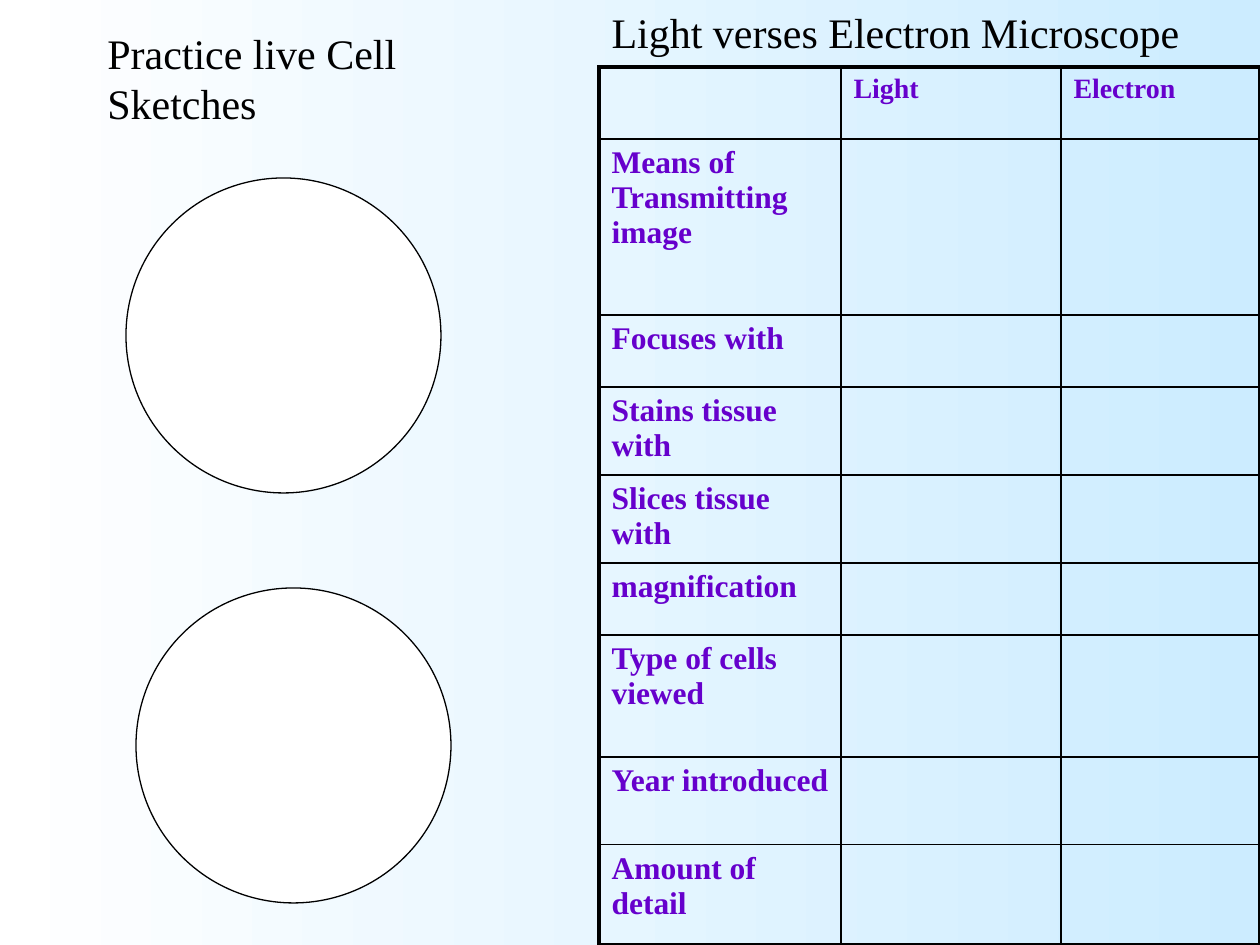
"""Build the cell sketches and microscope comparison slide."""
from lxml import etree
from pptx import Presentation
from pptx.dml.color import RGBColor
from pptx.enum.shapes import MSO_SHAPE
from pptx.enum.text import MSO_ANCHOR, PP_ALIGN
from pptx.oxml.ns import qn
from pptx.util import Pt

OVAL = MSO_SHAPE.OVAL
TOP = MSO_ANCHOR.TOP
LEFT = PP_ALIGN.LEFT
BLACK = RGBColor(0x00, 0x00, 0x00)
WHITE = RGBColor(0xFF, 0xFF, 0xFF)
PALE_BLUE = RGBColor(0xCC, 0xEC, 0xFF)
PURPLE = RGBColor(0x66, 0x00, 0xCC)
FONT = "Times New Roman"
OUTER, INNER = Pt(2.25), Pt(1)


def px(n):
    return round(n * 914400 / 126)


def write(tf, text, size, color, bold=False):
    tf.word_wrap = True
    p = tf.paragraphs[0]
    p.alignment = LEFT
    r = p.add_run()
    r.text = text
    r.font.name = FONT
    r.font.size = Pt(size)
    r.font.bold = bold
    r.font.color.rgb = color


prs = Presentation()
prs.slide_width, prs.slide_height = px(1260), px(945)
s = prs.slides.add_slide(prs.slide_layouts[5])

bg = s.background.fill
bg.gradient()
bg.gradient_angle = 0
for stop, color in zip(bg.gradient_stops, (WHITE, PALE_BLUE)):
    stop.color.rgb = color

title = s.shapes.title
title.left, title.top, title.width, title.height = px(599), px(0), px(661), px(63)
title.text_frame.vertical_anchor = TOP
write(title.text_frame, "Light verses Electron Microscope", 24, BLACK)

rows = [
    (72, ["", "Light", "Electron"]),
    (176, ["Means of Transmitting image"]),
    (72, ["Focuses with"]),
    (88, ["Stains tissue with"]),
    (88, ["Slices tissue with"]),
    (72, ["magnification"]),
    (122, ["Type of cells viewed"]),
    (88, ["Year introduced"]),
    (100, ["Amount of detail"]),
]
widths = [242, 220, 199]
last_row, last_col = len(rows) - 1, len(widths) - 1
table = s.shapes.add_table(len(rows), len(widths), px(599), px(67),
                           px(sum(widths)), px(sum(h for h, _ in rows))).table
table.first_row = table.horz_banding = False
for col, width in zip(table.columns, widths):
    col.width = px(width)

for i, (height, texts) in enumerate(rows):
    table.rows[i].height = px(height)
    for j in range(len(widths)):
        cell = table.cell(i, j)
        cell.fill.background()
        if j < len(texts) and texts[j]:
            write(cell.text_frame, texts[j], 18 if i else 16, PURPLE, True)
        edges = {"a:lnL": j == 0, "a:lnR": j == last_col,
                 "a:lnT": i == 0, "a:lnB": i == last_row}
        tcPr = cell._tc.get_or_add_tcPr()
        for k, (tag, is_outer) in enumerate(edges.items()):
            ln = etree.Element(qn(tag), w=str(OUTER if is_outer else INNER))
            fill = etree.SubElement(ln, qn("a:solidFill"))
            etree.SubElement(fill, qn("a:srgbClr"), val=str(BLACK))
            tcPr.insert(k, ln)

for x, y in ((126, 178), (136, 588)):
    sp = s.shapes.add_shape(OVAL, px(x), px(y), px(315), px(315))
    sp.shadow.inherit = False
    sp.fill.solid()
    sp.fill.fore_color.rgb = WHITE
    sp.line.color.rgb = BLACK
    sp.line.width = Pt(0.75)

heading = s.shapes.add_textbox(px(95), px(21), px(420), px(113))
write(heading.text_frame, "Practice live Cell Sketches", 24, BLACK)

prs.save("out.pptx")
